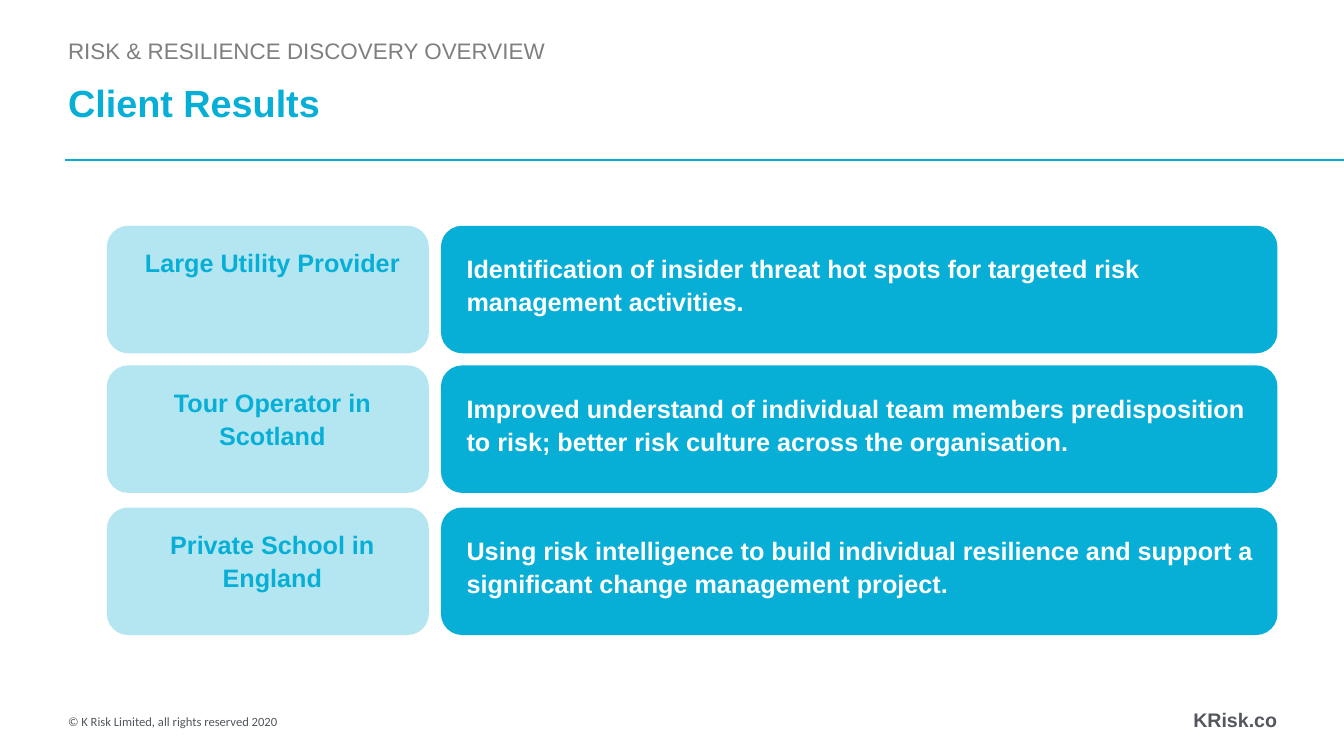
from lxml import etree
from pptx import Presentation
from pptx.dml.color import RGBColor
from pptx.enum.shapes import MSO_CONNECTOR, MSO_SHAPE
from pptx.enum.text import MSO_ANCHOR, MSO_AUTO_SIZE, PP_ALIGN
from pptx.oxml.ns import qn
from pptx.util import Emu, Pt

EMU_PER_PX = 9144
SLIDE_WIDTH, SLIDE_HEIGHT = 2667, 1500
MARGIN = 129

BLUE = RGBColor(0x07, 0xAF, 0xD7)
WHITE = RGBColor(0xFF, 0xFF, 0xFF)
GREY = RGBColor(0x7F, 0x7F, 0x7F)
DARK_GREY = RGBColor(0x53, 0x58, 0x5F)

LEFT, CENTER = PP_ALIGN.LEFT, PP_ALIGN.CENTER
MIDDLE, BOTTOM = MSO_ANCHOR.MIDDLE, MSO_ANCHOR.BOTTOM
ROUNDED = MSO_SHAPE.ROUNDED_RECTANGLE
STRAIGHT = MSO_CONNECTOR.STRAIGHT
NO_AUTOFIT = MSO_AUTO_SIZE.NONE

ROW_LEFT, CARD_HEIGHT = 212, 253
RESULTS = [
    (448, "Large Utility Provider",
     "Identification of insider threat hot spots for targeted risk management activities."),
    (725, "Tour Operator in Scotland",
     "Improved understand of individual team members predisposition to risk; "
     "better risk culture across the organisation."),
    (1007, "Private School in England",
     "Using risk intelligence to build individual resilience and support a "
     "significant change management project."),
]


def px(*lengths):
    return [Emu(length * EMU_PER_PX) for length in lengths]


def format_text(shape, text, size, color, bold=False, font="Arial", align=LEFT):
    shape.text_frame.text = text
    paragraph = shape.text_frame.paragraphs[0]
    paragraph.alignment = align
    paragraph.font.name = font
    paragraph.font.size = Pt(size)
    paragraph.font.bold = bold
    paragraph.font.color.rgb = color
    return paragraph


def set_frame(shape, anchor, wrap=True):
    """Give a heading or footer its narrow insets and anchor."""
    frame = shape.text_frame
    inset, = px(6)
    frame.margin_left = frame.margin_right = inset
    frame.margin_top = frame.margin_bottom = inset
    frame.vertical_anchor = anchor
    frame.word_wrap = wrap
    frame.auto_size = NO_AUTOFIT


def add_title(slide, text):
    title = slide.shapes.title
    title.left, title.top, title.width, title.height = px(MARGIN, 110, 700, 144)
    format_text(title, text, 54, BLUE, bold=True)
    set_frame(title, BOTTOM)


def add_label(slide, box, text, size, color, anchor=MIDDLE, wrap=True, **style):
    label = slide.shapes.add_textbox(*px(*box))
    format_text(label, text, size, color, **style)
    set_frame(label, anchor, wrap)


def add_rule(slide):
    rule = slide.shapes.add_connector(STRAIGHT, *px(MARGIN, 317, SLIDE_WIDTH, 317))
    rule.line.color.rgb = BLUE
    rule.line.width = Pt(2.5)
    etree.SubElement(rule._element.spPr, qn("a:effectLst"))


def add_card(group, left, top, width, opacity=100):
    card = group.shapes.add_shape(ROUNDED, *px(left, top, width, CARD_HEIGHT))
    card.shadow.inherit = False
    card.fill.solid()
    card.fill.fore_color.rgb = BLUE
    card.line.fill.background()
    if opacity < 100:
        color = card._element.spPr.find(qn("a:solidFill"))[0]
        etree.SubElement(color, qn("a:alpha"), val=str(opacity * 1000))


def add_card_text(group, box, text, color, align):
    text_box = group.shapes.add_textbox(*px(*box))
    text_box.text_frame.word_wrap = True
    paragraph = format_text(text_box, text, 36, color, bold=True, align=align)
    paragraph.line_spacing = 1.1


def add_result(slide, top, client, result):
    group = slide.shapes.add_group_shape()
    add_card(group, ROW_LEFT, top, 639, opacity=30)
    add_card(group, ROW_LEFT + 663, top, 1660)
    add_card_text(group, (ROW_LEFT + 31, top + 32, 595, 186), client, BLUE, CENTER)
    add_card_text(group, (ROW_LEFT + 704, top + 44, 1595, 165), result, WHITE, LEFT)


def main():
    presentation = Presentation()
    presentation.slide_width, presentation.slide_height = px(SLIDE_WIDTH, SLIDE_HEIGHT)
    slide = presentation.slides.add_slide(presentation.slide_layouts[5])

    add_rule(slide)
    add_label(slide, (2362, 1398, 180, 58), "KRisk.co", 28, DARK_GREY,
              wrap=False, bold=True)
    add_label(slide, (MARGIN, 1410, 480, 42),
              "© K Risk Limited, all rights reserved 2020", 18, DARK_GREY, font="Calibri")
    add_title(slide, "Client Results")
    for top, client, result in RESULTS:
        add_result(slide, top, client, result)
    add_label(slide, (MARGIN, 44, 2171, 89), "RISK & RESILIENCE DISCOVERY OVERVIEW",
              32, GREY, anchor=BOTTOM)

    presentation.save("out.pptx")


if __name__ == "__main__":
    main()
